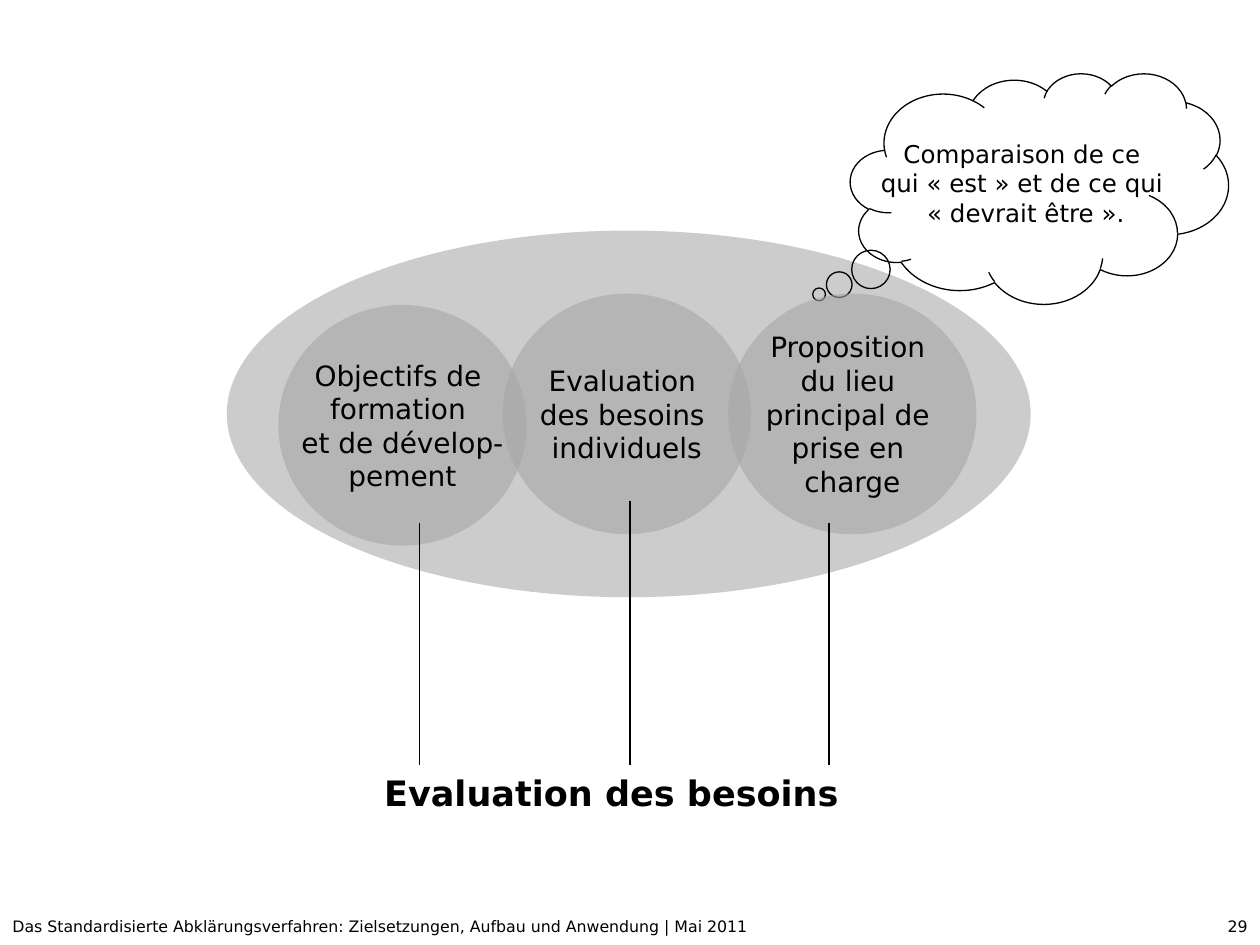
from copy import deepcopy
from dataclasses import dataclass

from lxml import etree
from pptx import Presentation
from pptx.dml.color import RGBColor
from pptx.enum.shapes import MSO_CONNECTOR as Connector, MSO_SHAPE as Shape
from pptx.enum.text import MSO_ANCHOR as Anchor, PP_ALIGN as Align
from pptx.oxml.ns import qn
from pptx.util import Inches, Pt


@dataclass(frozen=True)
class Theme:
    font: str = "DejaVu Sans"
    ink: RGBColor = RGBColor(0, 0, 0)
    field: RGBColor = RGBColor(0xCC, 0xCC, 0xCC)
    circle: RGBColor = RGBColor(0xA6, 0xA6, 0xA6)
    circle_opacity: int = 60
    line: Pt = Pt(0.75)
    footer: Pt = Pt(9)
    thought: Pt = Pt(14)
    label: Pt = Pt(16)
    heading: Pt = Pt(20)


theme = Theme()
deck = Presentation()
deck.slide_width, deck.slide_height = Inches(10), Inches(7.5)
page = deck.slides.add_slide(deck.slide_layouts[6])


def write(box, text, size, align=Align.LEFT, anchor=Anchor.TOP, bold=False, wrap=False):
    """Set one paragraph; its line breaks take the same type size as its words."""
    frame = box.text_frame
    frame.word_wrap = wrap
    frame.vertical_anchor = anchor
    para = frame.paragraphs[0]
    para.text = text
    para.alignment = align
    for span in para.runs:
        for name, value in {"name": theme.font, "size": size, "bold": bold}.items():
            setattr(span.font, name, value)
        span.font.color.rgb = theme.ink
    for line_break in para._p.findall(qn("a:br")):
        line_break.append(deepcopy(para.runs[0]._r.rPr))


def add_shape(kind, left, top, width, height, fill=None):
    shape = page.shapes.add_shape(
        kind, Inches(left), Inches(top), Inches(width), Inches(height))
    shape.shadow.inherit = False
    if fill is None:
        shape.fill.background()
        shape.line.color.rgb = theme.ink
        shape.line.width = theme.line
    else:
        shape.fill.solid()
        shape.fill.fore_color.rgb = fill
        shape.line.fill.background()
    return shape


# Footer
footer = "Das Standardisierte Abklärungsverfahren: Zielsetzungen, Aufbau und Anwendung | Mai 2011"
for text, left, width, align in [("29", 6.1, 3.9, Align.RIGHT),
                                 (footer, 0, 8.08, Align.LEFT)]:
    box = page.shapes.add_textbox(Inches(left), Inches(7.23), Inches(width), Inches(0.25))
    write(box, text, theme.footer, align, wrap=True)

# Field around the three circles, and its heading
add_shape(Shape.OVAL, 1.8, 1.83, 6.38, 2.91, theme.field)
heading = page.shapes.add_textbox(Inches(2.95), Inches(6.07), Inches(3.81), Inches(0.44))
write(heading, "Evaluation des besoins", theme.heading, bold=True)

# Thought cloud
cloud = add_shape(Shape.CLOUD_CALLOUT, 6.75, 0.58, 3, 1.83)
cloud.adjustments[0], cloud.adjustments[1] = -0.583, 0.46
write(cloud, "Comparaison de ce \nqui «\u00a0est\u00a0» et de ce qui \n«\u00a0devrait être\u00a0».".replace("\u00a0", chr(160)),
      theme.thought, Align.CENTER, Anchor.MIDDLE)

# Overlapping translucent circles
circles = [
    (2.21, 2.42, "Objectifs de \nformation \net de dévelop-\npement"),
    (3.99, 2.33, "Evaluation \ndes besoins \nindividuels"),
    (5.78, 2.33, "Proposition \ndu lieu \nprincipal de \nprise en \ncharge"),
]
for left, top, text in circles:
    circle = add_shape(Shape.OVAL, left, top, 1.97, 1.91, theme.circle)
    color = circle._element.spPr.find(qn("a:solidFill")).find(qn("a:srgbClr"))
    etree.SubElement(color, qn("a:alpha"), val=str(theme.circle_opacity * 1000))
    write(circle, text, theme.label, Align.CENTER, Anchor.MIDDLE)

# Lines from the circles down to the heading
for x, top in [(3.33, 4.15), (5, 3.98), (6.58, 4.15)]:
    line = page.shapes.add_connector(
        Connector.STRAIGHT, Inches(x), Inches(top), Inches(x), Inches(6.07))
    line.line.color.rgb = theme.ink
    line.line.width = theme.line
    etree.SubElement(line._element.spPr, qn("a:effectLst"))

deck.save("out.pptx")
